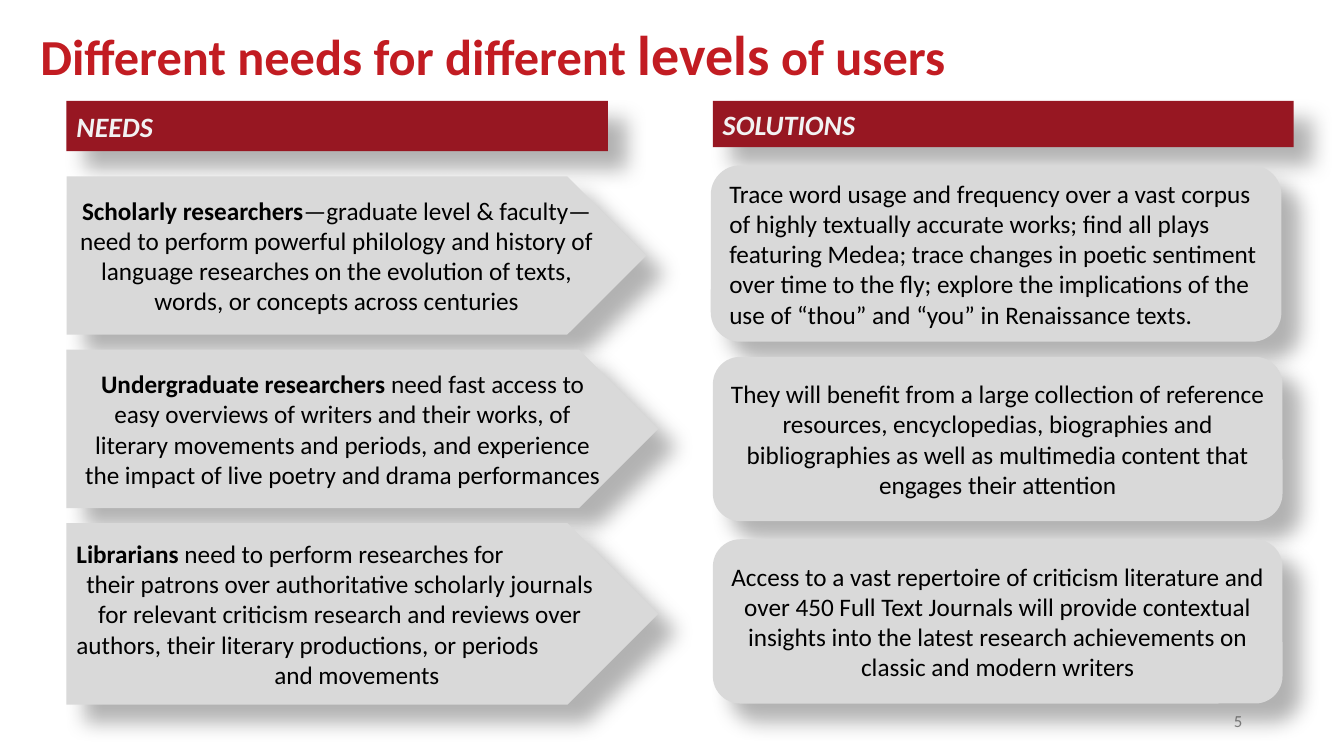
"""Build the slide on needs and solutions for different levels of users."""
from lxml import etree
from pptx import Presentation
from pptx.dml.color import RGBColor
from pptx.enum.shapes import MSO_SHAPE as SHAPE
from pptx.enum.text import MSO_ANCHOR as ANCHOR, MSO_AUTO_SIZE as AUTO_SIZE, PP_ALIGN as ALIGN
from pptx.oxml.ns import qn
from pptx.util import Emu, Pt

PX = 9144
COLORS = {"title": "C21C22", "header": "971722", "header_text": "F2F2F2",
          "panel": "D9D9D9", "text": "000000", "number": "8C8C8C"}


def write(shape, paragraphs, size=18, color="text", align=ALIGN.CENTER, after=0, **font):
    """Write paragraphs, each a string or a list of (text, overrides) runs."""
    frame = shape.text_frame
    frame.word_wrap = True
    frame.auto_size = AUTO_SIZE.NONE
    frame.vertical_anchor = ANCHOR.MIDDLE
    for index, runs in enumerate(paragraphs):
        paragraph = frame.paragraphs[0] if index == 0 else frame.add_paragraph()
        paragraph.alignment = align
        for text, overrides in [(runs, {})] if isinstance(runs, str) else runs:
            for part_index, part in enumerate(text.split("\v")):
                if part_index:
                    paragraph.add_line_break()
                run = paragraph.add_run()
                run.text = part
                style = {"size": size, "bold": False, "italic": False, **font, **overrides}
                run.font.name = "Calibri"
                run.font.size = Pt(style["size"])
                run.font.bold = style["bold"]
                run.font.italic = style["italic"]
                run.font.color.rgb = RGBColor.from_string(COLORS[color])
    paragraph.space_after = Pt(after)
    return frame.paragraphs


def add_panel(kind, box, fill):
    """Add a filled preset shape with a soft shadow."""
    shape = slide.shapes.add_shape(kind, *[Emu(value * PX) for value in box])
    shape.fill.solid()
    shape.fill.fore_color.rgb = RGBColor.from_string(COLORS[fill])
    shape.line.fill.background()
    shape.shadow.inherit = False
    effects = shape.element.spPr.find(qn("a:effectLst"))
    shadow = etree.SubElement(effects, qn("a:outerShdw"), blurRad=str(Pt(15)), dist=str(Pt(18)),
                              dir="2700000", algn="tl", rotWithShape="0")
    shadow_color = etree.SubElement(shadow, qn("a:srgbClr"), val=COLORS["text"])
    etree.SubElement(shadow_color, qn("a:alpha"), val="30000")
    return shape


presentation = Presentation()
presentation.slide_width = Emu(1333 * PX)
presentation.slide_height = Emu(750 * PX)
slide = presentation.slides.add_slide(presentation.slide_layouts[5])

title = slide.shapes.title
title.left, title.top, title.width, title.height = [Emu(v * PX) for v in (30, 20, 1200, 74)]
title_runs = [("Different needs for different ", {}), ("levels", {"size": 40}), (" of users", {})]
write(title, [title_runs], size=36, color="title", align=ALIGN.LEFT, bold=True)[0].line_spacing = 0.9

number = slide.shapes.add_textbox(*[Emu(v * PX) for v in (942, 695, 300, 40)])
write(number, ["5"], size=12, color="number", align=ALIGN.RIGHT)

headers = [("SOLUTIONS", (707, 100, 576, 46)), ("NEEDS", (66, 100, 537, 50))]
for text, box in headers:
    write(add_panel(SHAPE.RECTANGLE, box, "header"), [text], size=20, color="header_text",
          align=ALIGN.LEFT, bold=True, italic=True)

BOLD = {"bold": True}
needs = [
    ((66, 175, 575, 157), [[
        ("Scholarly researchers", BOLD),
        ("—graduate level & faculty—need to perform powerful philology and history of language "
         "researches on the evolution of texts, words, or concepts across centuries", {})]]),
    ((66, 347, 587, 157), [[
        ("Undergraduate researchers ", BOLD),
        ("need fast access to\veasy overviews of writers and their works, of literary movements "
         "and periods, and experience the impact of live poetry and drama performances", {})]]),
    ((66, 519, 587, 180), [
        [("Librarians", BOLD), (" need to perform researches for", {})],
        "their patrons over authoritative scholarly journals for relevant criticism research "
        "and reviews over",
        "authors, their literary productions, or periods",
        "and movements"]),
]
for box, text in needs:
    paragraphs = write(add_panel(SHAPE.PENTAGON, box, "panel"), text, after=4)
    if len(paragraphs) > 1:
        for paragraph in paragraphs[::2]:
            paragraph.alignment = ALIGN.LEFT
        paragraphs[-1]._p.get_or_add_pPr().set("marL", str(34 * PX))

solutions = [
    ((705, 164, 566, 175), ALIGN.LEFT, 0,
     "Trace word usage and frequency over a vast corpus of highly textually accurate works; "
     "find all plays featuring Medea; trace changes in poetic sentiment over time to the fly; "
     "explore the implications of the use of “thou” and “you” in Renaissance texts."),
    ((707, 354, 565, 163), ALIGN.CENTER, 4,
     "They will benefit from a large collection of reference resources, encyclopedias, "
     "biographies and bibliographies as well as multimedia content that engages their attention"),
    ((707, 535, 565, 163), ALIGN.CENTER, 4,
     "Access to a vast repertoire of criticism literature and over 450 Full Text Journals will "
     "provide contextual insights into the latest research achievements on classic and modern "
     "writers"),
]
for box, align, after, text in solutions:
    write(add_panel(SHAPE.ROUNDED_RECTANGLE, box, "panel"), [text], align=align, after=after)

presentation.save("out.pptx")
